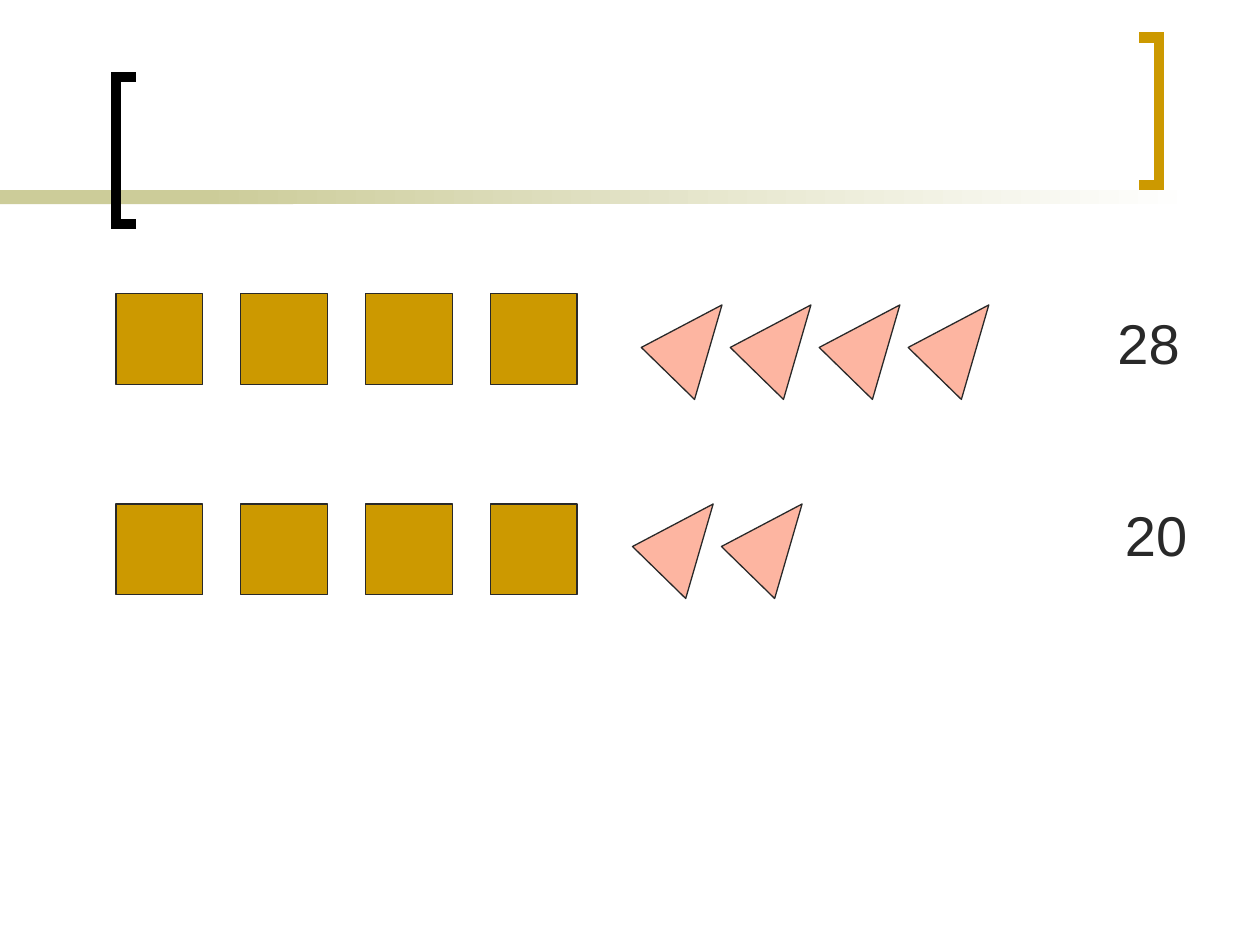
from dataclasses import dataclass

from lxml.etree import SubElement
from pptx import Presentation
from pptx.dml.color import RGBColor as Color
from pptx.enum.shapes import MSO_SHAPE as Shape
from pptx.oxml.ns import qn
from pptx.util import Inches, Pt


@dataclass(frozen=True)
class Theme:
    ink: Color = Color.from_string("292929")
    black: Color = Color.from_string("000000")
    gold: Color = Color.from_string("CC9900")
    pink: Color = Color.from_string("FDB5A1")
    olive: Color = Color.from_string("CCCC99")
    white: Color = Color.from_string("FFFFFF")
    font: str = "Arial"
    number_size: int = 32
    outline: float = 0.75
    bracket: float = 6


@dataclass(frozen=True)
class Box:
    left: float
    top: float
    width: float
    height: float

    def point(self, across, down):
        return (Inches(self.left + across * self.width),
                Inches(self.top + down * self.height))

    def shifted(self, distance):
        return Box(self.left + distance, self.top, self.width, self.height)

    def lengths(self):
        return [Inches(n) for n in (self.left, self.top, self.width, self.height)]


THEME = Theme()
PAGE_WIDTH, PAGE_HEIGHT = 10, 7.5
TRIANGLE = [(0, 0.45), (1, 0), (0.66, 1)]
LEFT_BRACKET = [(1, 1), (0, 1), (0, 0), (1, 0)]
RIGHT_BRACKET = [(0, 0), (1, 0), (1, 1), (0, 1)]
SQUARE_PITCH = 0.99
TRIANGLE_PITCH = 0.706


def draw_outline(page, box, corners, closed):
    points = [box.point(*corner) for corner in corners]
    builder = page.shapes.build_freeform(*points[0], scale=1.0)
    builder.add_line_segments(points[1:], close=closed)
    shape = builder.convert_to_shape()
    shape.shadow.inherit = False
    return shape


def paint(shape, fill):
    shape.shadow.inherit = False
    shape.fill.solid()
    shape.fill.fore_color.rgb = fill
    shape.line.color.rgb = THEME.ink
    shape.line.width = Pt(THEME.outline)


def draw_bracket(page, box, corners, color):
    bracket = draw_outline(page, box, corners, closed=False)
    bracket.fill.background()
    bracket.line.color.rgb = color
    bracket.line.width = Pt(THEME.bracket)
    SubElement(bracket.line._get_or_add_ln(), qn("a:miter"), lim="800000")


def draw_band(page, box):
    solid = Box(box.left, box.top, 0.245 * box.width, box.height)
    fade = Box(box.left + box.width / 6, box.top, box.width * 5 / 6, box.height)
    for part in (solid, fade):
        bar = page.shapes.add_shape(Shape.RECTANGLE, *part.lengths())
        bar.shadow.inherit = False
        bar.line.fill.background()
        if part is solid:
            bar.fill.solid()
            bar.fill.fore_color.rgb = THEME.olive
        else:
            bar.fill.gradient()
            bar.fill.gradient_angle = 0
            for stop, color, position in zip(
                    bar.fill.gradient_stops, (THEME.olive, THEME.white), (0, 1)):
                stop.color.rgb = color
                stop.position = position


def draw_squares(page, box, count):
    for index in range(count):
        cell = box.shifted(index * SQUARE_PITCH)
        square = page.shapes.add_shape(Shape.RECTANGLE, *cell.lengths())
        paint(square, THEME.gold)


def draw_triangles(page, box, count):
    for index in range(count):
        cell = box.shifted(index * TRIANGLE_PITCH)
        paint(draw_outline(page, cell, TRIANGLE, closed=True), THEME.pink)


def draw_number(page, box, text):
    label = page.shapes.add_textbox(*box.lengths())
    label.text_frame.word_wrap = False
    para = label.text_frame.paragraphs[0]
    para.text = text
    para.font.name = THEME.font
    para.font.size = Pt(THEME.number_size)
    para.font.color.rgb = THEME.ink


def main():
    deck = Presentation()
    deck.slide_width, deck.slide_height = Inches(PAGE_WIDTH), Inches(PAGE_HEIGHT)
    page = deck.slides.add_slide(deck.slide_layouts[6])

    draw_band(page, Box(0, 1.51, 0.95 * PAGE_WIDTH, 0.11))
    draw_bracket(page, Box(0.92, 0.61, 0.16, 1.17), LEFT_BRACKET, THEME.black)
    draw_bracket(page, Box(9.04, 0.3, 0.16, 1.17), RIGHT_BRACKET, THEME.gold)

    rows = [
        (2.33, (5.09, 2.42), 4, (8.77, 2.4), "28"),
        (4, (5.02, 4), 2, (8.83, 3.92), "20"),
    ]
    for top, triangle_start, triangles, number_start, number in rows:
        draw_squares(page, Box(0.92, top, 0.69, 0.72), 4)
        draw_triangles(page, Box(*triangle_start, 0.64, 0.75), triangles)
        draw_number(page, Box(*number_start, 0.7, 0.63), number)

    deck.save("out.pptx")


if __name__ == "__main__":
    main()
